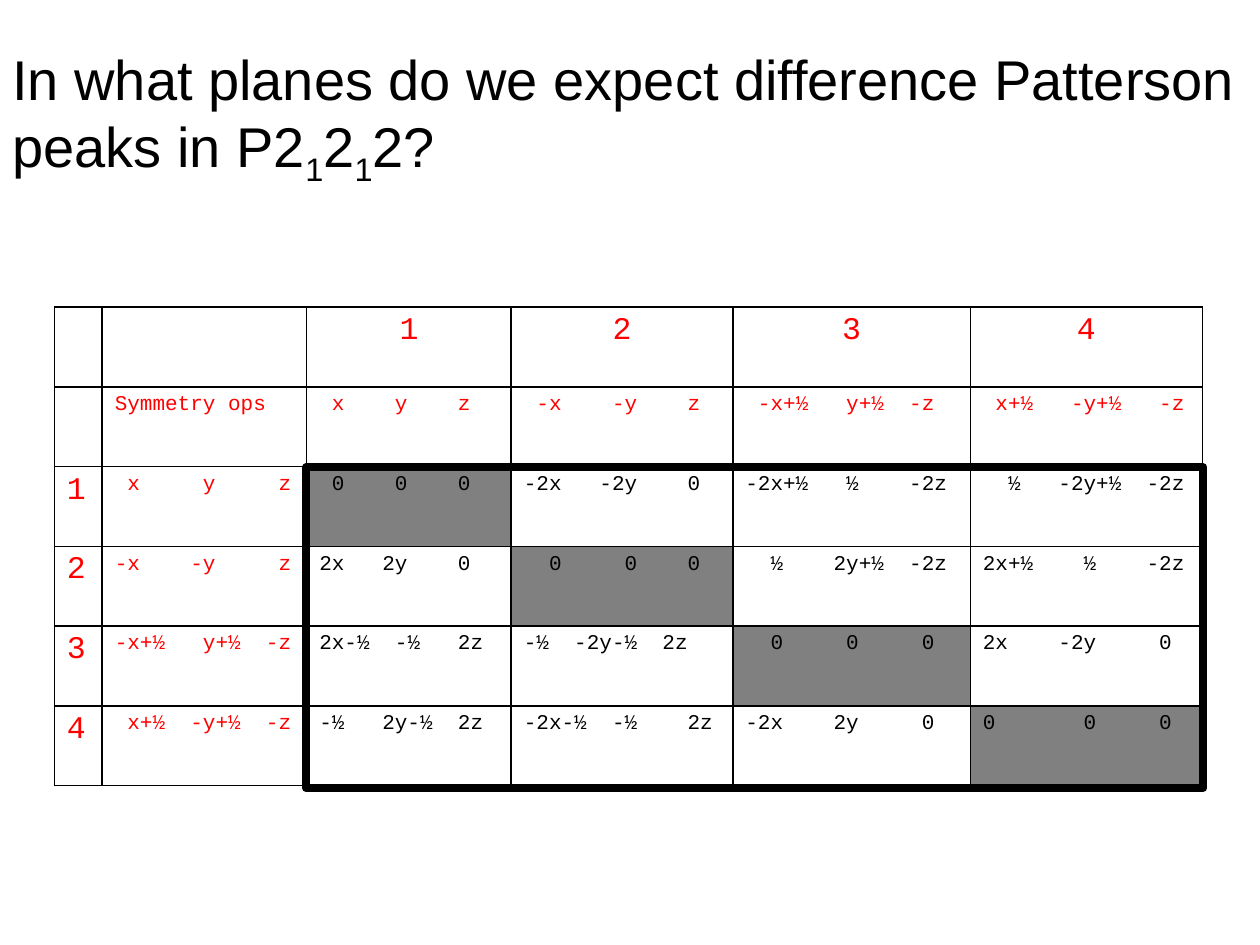
from lxml import etree
from pptx import Presentation
from pptx.dml.color import RGBColor
from pptx.enum.shapes import MSO_SHAPE
from pptx.enum.text import MSO_ANCHOR, PP_ALIGN
from pptx.oxml.ns import qn
from pptx.util import Pt

BLACK, RED, GRAY, WHITE = "000000", "FF0000", "808080", "FFFFFF"
MONO = "Courier New"
CHAR = 7.2  # width of one 12 pt monospaced character

COLUMN_WIDTHS = [27.4, 116.9, 116.9, 126.6, 135.7, 132.6]
ROW_HEIGHT = 45.6

# Each entry: coordinates x, y, z and the character column where each begins
OPERATORS_ACROSS = [
    ("x y z", (1, 6, 11)), ("-x -y z", (1, 7, 13)),
    ("-x+½ y+½ -z", (1, 8, 13)), ("x+½ -y+½ -z", (1, 7, 14)),
]
OPERATORS_DOWN = [
    ("x y z", (1, 7, 13)), ("-x -y z", (0, 6, 13)),
    ("-x+½ y+½ -z", (0, 7, 12)), ("x+½ -y+½ -z", (1, 6, 12)),
]
DIFFERENCES = [
    [("0 0 0", (1, 6, 11)), ("-2x -2y 0", (0, 6, 13)),
     ("-2x+½ ½ -2z", (0, 8, 13)), ("½ -2y+½ -2z", (2, 6, 13))],
    [("2x 2y 0", (0, 5, 11)), ("0 0 0", (2, 8, 13)),
     ("½ 2y+½ -2z", (2, 7, 13)), ("2x+½ ½ -2z", (0, 8, 13))],
    [("2x-½ -½ 2z", (0, 6, 11)), ("-½ -2y-½ 2z", (0, 4, 11)),
     ("0 0 0", (2, 8, 14)), ("2x -2y 0", (0, 6, 14))],
    [("-½ 2y-½ 2z", (0, 5, 11)), ("-2x-½ -½ 2z", (0, 7, 13)),
     ("-2x 2y 0", (0, 7, 14)), ("0 0 0", (0, 8, 14))],
]


def rgb(color):
    return RGBColor.from_string(color)


def write(paragraph, text, size=12, font=MONO, color=BLACK, align=PP_ALIGN.LEFT,
          subscript=False):
    paragraph.alignment = align
    run = paragraph.add_run()
    run.text = text
    run.font.size, run.font.name, run.font.bold = Pt(size), font, False
    run.font.color.rgb = rgb(color)
    if subscript:
        run.font._element.set("baseline", "-25000")


def write_triplet(cell, triplet, color):
    """Set three coordinates on tab stops."""
    text, starts = triplet
    paragraph = cell.text_frame.paragraphs[0]
    lead = "\t" if starts[0] else ""
    write(paragraph, lead + "\t".join(text.split()), color=color)
    tabs = etree.SubElement(paragraph._p.get_or_add_pPr(), qn("a:tabLst"))
    for start in filter(None, starts):
        etree.SubElement(tabs, qn("a:tab"), pos=str(Pt(start * CHAR)), algn="l")


def add_borders(cell):
    properties = cell._tc.get_or_add_tcPr()
    for side in ("a:lnL", "a:lnR", "a:lnT", "a:lnB"):
        border = etree.SubElement(properties, qn(side), w=str(Pt(1)))
        fill = etree.SubElement(border, qn("a:solidFill"))
        etree.SubElement(fill, qn("a:srgbClr"), val=BLACK)


def add_title(slide, left, top, width, height):
    frame = slide.shapes.add_textbox(Pt(left), Pt(top), Pt(width), Pt(height)).text_frame
    frame.word_wrap = True
    frame.vertical_anchor = MSO_ANCHOR.MIDDLE
    pieces = ["In what planes do we expect difference Patterson peaks in P2",
              "1", "2", "1", "2?"]
    for index, piece in enumerate(pieces):
        write(frame.paragraphs[0], piece, size=32, font="Arial", subscript=index % 2 == 1)


def add_difference_table(slide, left, top):
    table = slide.shapes.add_table(6, 6, Pt(left), Pt(top), Pt(sum(COLUMN_WIDTHS)),
                                   Pt(6 * ROW_HEIGHT)).table
    table.first_row = table.horz_banding = False
    for column, width in zip(table.columns, COLUMN_WIDTHS):
        column.width = Pt(width)
    for row in table.rows:
        row.height = Pt(ROW_HEIGHT)
    for cell in table.iter_cells():
        add_borders(cell)
        cell.fill.background()

    # Operator numbers and symmetry operators along both edges
    write(table.cell(1, 1).text_frame.paragraphs[0], "Symmetry ops", color=RED)
    for n in range(4):
        number = str(n + 1)
        write(table.cell(0, n + 2).text_frame.paragraphs[0], number, size=18, color=RED,
              align=PP_ALIGN.CENTER)
        write(table.cell(n + 2, 0).text_frame.paragraphs[0], number, size=18, color=RED)
        write_triplet(table.cell(1, n + 2), OPERATORS_ACROSS[n], RED)
        write_triplet(table.cell(n + 2, 1), OPERATORS_DOWN[n], RED)

    # Difference vectors, with the origin peaks shaded on the diagonal
    for i, vectors in enumerate(DIFFERENCES):
        for j, vector in enumerate(vectors):
            cell = table.cell(i + 2, j + 2)
            cell.fill.solid()
            cell.fill.fore_color.rgb = rgb(GRAY if i == j else WHITE)
            write_triplet(cell, vector, BLACK)


def add_frame(slide, left, top, width, height):
    frame = slide.shapes.add_shape(MSO_SHAPE.RECTANGLE, Pt(left), Pt(top), Pt(width),
                                   Pt(height))
    frame.shadow.inherit = False
    frame.fill.background()
    frame.line.color.rgb = rgb(BLACK)
    frame.line.width = Pt(4.5)
    etree.SubElement(frame.line._get_or_add_ln(), qn("a:round"))


def main():
    presentation = Presentation()
    presentation.slide_width, presentation.slide_height = Pt(720), Pt(540)
    slide = presentation.slides.add_slide(presentation.slide_layouts[6])
    add_title(slide, 0, 21.6, 720, 90)
    add_difference_table(slide, 31, 175.5)
    add_frame(slide, 175, 267, 512.6, 183.4)
    presentation.save("out.pptx")


if __name__ == "__main__":
    main()
